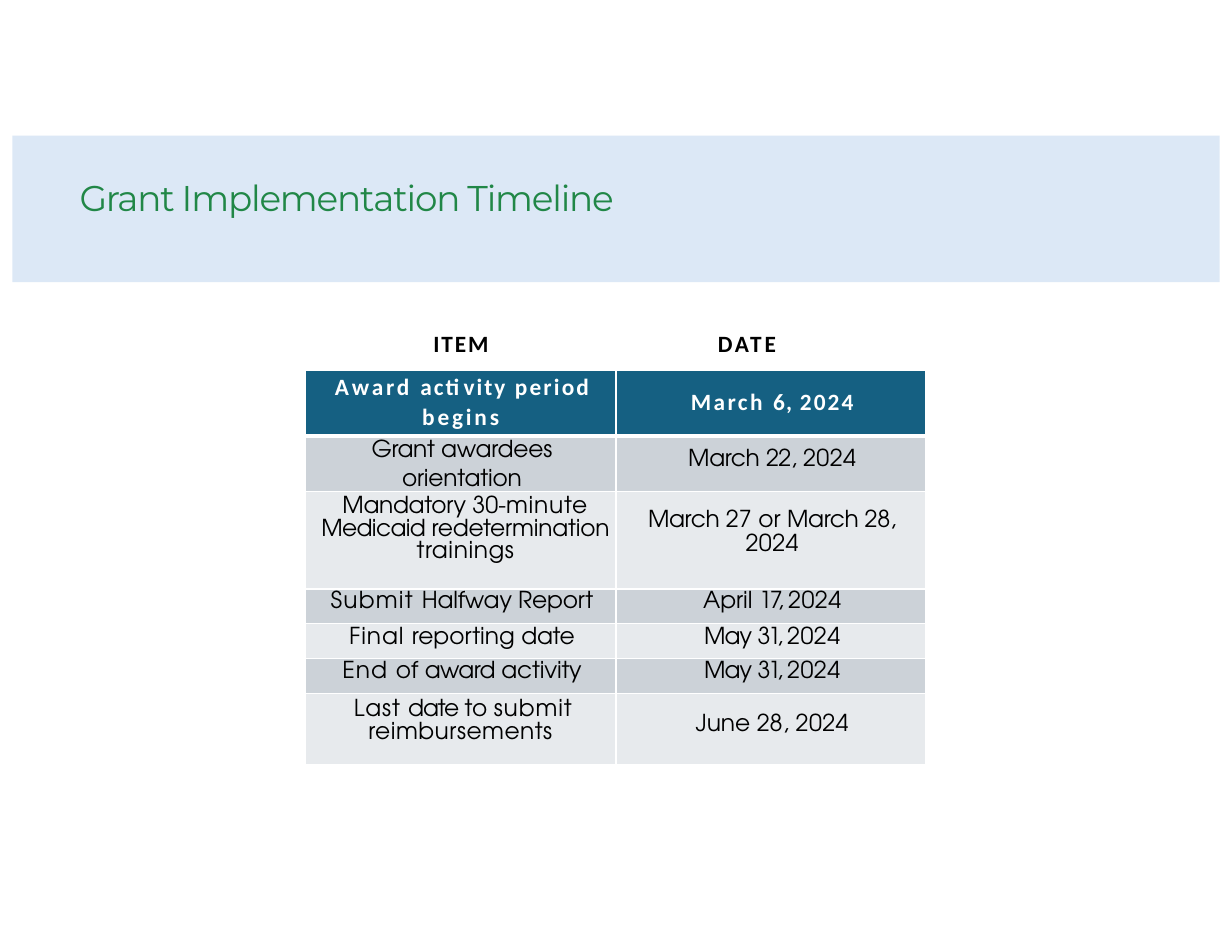
import pptx
import pptx.util
import pptx.dml.color
import pptx.enum.shapes
import pptx.enum.text
import pptx.oxml.ns
import lxml.etree

COLORS = {
    "band": "DCE8F6", "title": "218747", "header": "156082", "dark": "CCD2D8",
    "light": "E7EAED", "white": "FFFFFF", "black": "000000",
}
FONTS = {"title": "Montserrat", "label": "Calibri", "body": "TeX Gyre Adventor"}
ALIGN = pptx.enum.text.PP_ALIGN
WIDTH, HEIGHT = 11, 8.5
COLUMNS, ROWS = 110, 85
BODY_SIZE = 15
YEAR = ("2024", 0.3)
MAY_31 = [[("May ", -0.6), ("31, ", -1.6), YEAR]]

TIMELINE = [
    (5.8,
     ([[("Award ", 1.8), ("activity ", 1.3), ("period ", 1.4), ("begins", 1.8)]],
      {"top": 0.1, "left": 10.4, "hang": -7.8, "align": ALIGN.LEFT, "spacing": 1.05}),
     ([[("March ", 1.6), ("6, ", 0.8), ("2024", 1.4)]], {"top": 1.6})),
    (5,
     ([[("Grant ", -0.2), ("awardees", -0.1)], [("orientation", -0.1)]],
      {"top": 0, "spacing": pptx.util.Pt(17.2), "before": 0.9}),
     ([[("March ", -0.2), ("22, ", -0.4), YEAR]], {"top": 1.2})),
    (8.7,
     ([[("Mandatory ", -0.2), ("30-", 0), ("minute ", 0.5), ("Medicaid ", -0.4),
        ("redetermination ", -0.1), ("trainings", 0.4)]],
      {"top": 0.4, "left": 0.8, "spacing": 1.03}),
     ([[("March ", -0.2), ("27 or ", 0), ("March 28,", -0.2)], [YEAR]],
      {"top": 1.7, "before": 1})),
    (3.1,
     ([[("Submit ", 0.8), ("Halfway Report", -0.1)]], {"top": 0.2}),
     ([[("April ", 0), ("17, ", -1.4), YEAR]], {"top": 0.2})),
    (3.1,
     ([[("Final ", 0.6), ("reporting ", 0), ("date", -0.2)]], {"top": 0.3}),
     (MAY_31, {"top": 0.3})),
    (3.1,
     ([[("End ", 0.7), ("of ", 0), ("award ", -0.4), ("activity", -0.1)]], {"top": 0.3}),
     (MAY_31, {"top": 0.3})),
    (6.4,
     ([[("Last ", 0.5), ("date ", -0.7), ("to ", 0), ("submit ", 0.6),
        ("reimbursements", 0.3)]],
      {"top": 0.4, "left": 5.6, "hang": -1.3, "align": ALIGN.LEFT, "spacing": 1.07}),
     ([[("June 28, ", 0), YEAR]], {"top": 1.9})),
]


def across(columns):
    return pptx.util.Inches(columns * WIDTH / COLUMNS)


def down(rows):
    return pptx.util.Inches(rows * HEIGHT / ROWS)


def rgb(name):
    return pptx.dml.color.RGBColor.from_string(COLORS[name])


def write(frame, paragraphs, font, color, size=BODY_SIZE, bold=False, align=ALIGN.LEFT,
          left=0.1, hang=0, spacing=None, before=0):
    for index, runs in enumerate(paragraphs):
        paragraph = frame.paragraphs[0] if index == 0 else frame.add_paragraph()
        paragraph.alignment = align
        if spacing:
            paragraph.line_spacing = spacing
        if index:
            paragraph.space_before = pptx.util.Pt(before)
        properties = paragraph._p.get_or_add_pPr()
        properties.set("marL", str(across(left)))
        properties.set("indent", str(across(hang)))
        for text, tracking in runs:
            run = paragraph.add_run()
            run.text = text
            run.font.name = FONTS[font]
            run.font.size = pptx.util.Pt(size)
            run.font.bold = bold
            run.font.color.rgb = rgb(color)
            run._r.get_or_add_rPr().set("spc", str(round(tracking * 100)))


class TimelineSlide:
    def __init__(self, presentation):
        self.slide = presentation.slides.add_slide(presentation.slide_layouts[5])
        self.shapes = self.slide.shapes

    def band(self, x, y, width, height):
        shape = self.shapes.add_shape(
            pptx.enum.shapes.MSO_SHAPE.RECTANGLE,
            across(x), down(y), across(width), down(height))
        shape.shadow.inherit = False
        shape.fill.solid()
        shape.fill.fore_color.rgb = rgb("band")
        shape.line.fill.background()

    def fit(self, frame, wrap):
        frame.margin_left = frame.margin_right = frame.margin_bottom = 0
        frame.margin_top = down(0.1)
        frame.vertical_anchor = pptx.enum.text.MSO_ANCHOR.TOP
        frame.auto_size = pptx.enum.text.MSO_AUTO_SIZE.NONE
        frame.word_wrap = wrap

    def title(self, text, x, y, width, height):
        title = self.shapes.title
        title.left, title.top = across(x), down(y)
        title.width, title.height = across(width), down(height)
        self.shapes._spTree.append(title._element)
        self.fit(title.text_frame, True)
        write(title.text_frame, [[(text, -0.8)]], font="title", color="title", size=23)

    def label(self, text, tracking, x, y, width, height):
        box = self.shapes.add_textbox(across(x), down(y), across(width), down(height))
        self.fit(box.text_frame, False)
        write(box.text_frame, [[(text, tracking)]], font="label", color="black", bold=True)

    def border(self, cell, side, points):
        line = lxml.etree.SubElement(
            cell._tc.get_or_add_tcPr(), pptx.oxml.ns.qn("a:" + side),
            w=str(pptx.util.Pt(points)))
        fill = lxml.etree.SubElement(line, pptx.oxml.ns.qn("a:solidFill"))
        lxml.etree.SubElement(fill, pptx.oxml.ns.qn("a:srgbClr"), val=COLORS["white"])

    def cell(self, cell, row, paragraphs, top, **layout):
        header = row == 0
        for side in ("lnL", "lnR", "lnT", "lnB"):
            under_header = (row, side) in ((0, "lnB"), (1, "lnT"))
            self.border(cell, side, 3 if under_header else 1)
        cell.fill.solid()
        cell.fill.fore_color.rgb = rgb("header" if header else "dark" if row % 2 else "light")
        cell.margin_left = cell.margin_right = cell.margin_bottom = 0
        cell.margin_top = down(top)
        style = {"align": ALIGN.CENTER, "left": 0.2, **layout}
        write(cell.text_frame, paragraphs, font="label" if header else "body",
              color="white" if header else "black", bold=header, **style)

    def table(self, entries, x, y, column_width):
        height = sum(entry[0] for entry in entries)
        table = self.shapes.add_table(
            len(entries), 2, across(x), down(y), across(2 * column_width), down(height)).table
        table.first_row = table.horz_banding = False
        for column in table.columns:
            column.width = across(column_width)
        for row, (row_height, *contents) in enumerate(entries):
            table.rows[row].height = down(row_height)
            for column, (paragraphs, layout) in enumerate(contents):
                self.cell(table.cell(row, column), row, paragraphs, **layout)


def main():
    presentation = pptx.Presentation()
    presentation.slide_width = pptx.util.Inches(WIDTH)
    presentation.slide_height = pptx.util.Inches(HEIGHT)
    page = TimelineSlide(presentation)
    page.band(1.1, 12.1, 107.8, 13.1)
    page.title("Grant Implementation Timeline", 7, 15.6, 75.2, 5.6)
    page.table(TIMELINE, 27.3, 33.1, 27.7)
    page.label("ITEM", 1.2, 38.6, 29.3, 5.5, 2.8)
    page.label("DATE", 1.9, 64, 29.3, 6.1, 2.8)
    presentation.save("out.pptx")


if __name__ == "__main__":
    main()
